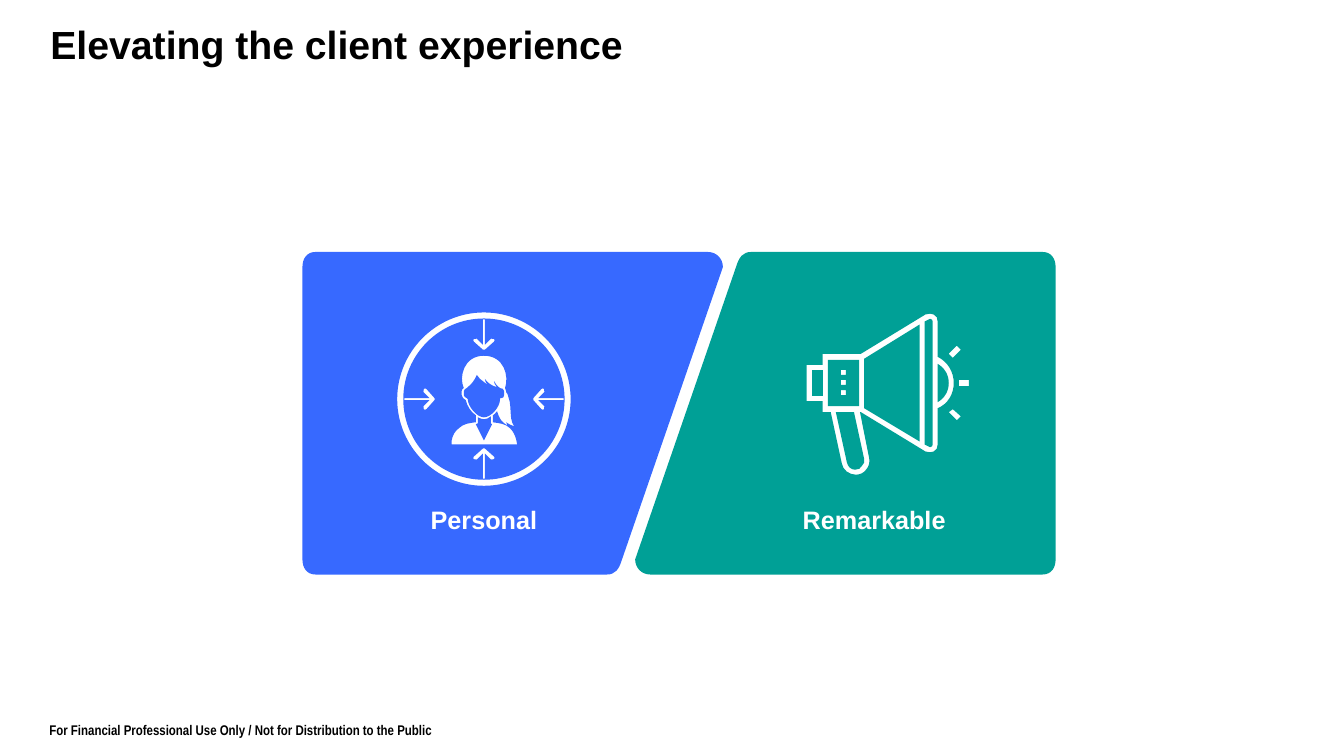
from lxml import etree
from pptx import Presentation
from pptx import util as u
from pptx.dml.color import RGBColor
from pptx.enum import text
from pptx.oxml.ns import qn

BLUE, TEAL, WHITE, BLACK = "3769FF", "00A096", "FFFFFF", "000000"
PANEL_WIDTH, PANEL_HEIGHT = 4.17, 3.2

# Outlines in inches: (x, y) is a corner, six numbers are a Bezier curve.
PANEL = [(4.02, 0), (0.13, 0), (0.04, 0, 0, 0.07, 0, 0.15), (0, 3.05),
         (0, 3.13, 0.04, 3.2, 0.13, 3.2), (3.02, 3.2),
         (3.1, 3.2, 3.14, 3.15, 3.17, 3.05), (4.17, 0.15),
         (4.17, 0.07, 4.11, 0, 4.02, 0)]

# Measured from the centre of the ring.
BUST = [(-0.32, 0.45), (-0.32, 0.41), (-0.31, 0.36, -0.29, 0.32, -0.25, 0.29),
        (-0.2, 0.24, -0.14, 0.24, -0.09, 0.23), (-0.08, 0.23), (-0.08, 0.16),
        (-0.13, 0.13, -0.17, 0.06, -0.18, 0.01),
        (-0.2, 0, -0.22, -0.02, -0.22, -0.04), (-0.22, -0.08),
        (-0.22, -0.09, -0.21, -0.11, -0.2, -0.11),
        (-0.25, -0.22, -0.2, -0.43, 0, -0.43),
        (0.2, -0.43, 0.25, -0.23, 0.21, -0.11),
        (0.21, -0.1, 0.22, -0.09, 0.22, -0.08), (0.22, -0.07),
        (0.23, -0.06, 0.24, -0.04, 0.24, -0.03),
        (0.27, 0.04, 0.26, 0.12, 0.27, 0.19),
        (0.28, 0.22, 0.28, 0.25, 0.3, 0.27),
        (0.27, 0.27, 0.25, 0.24, 0.22, 0.23),
        (0.23, 0.24, 0.23, 0.26, 0.23, 0.26),
        (0.21, 0.25, 0.19, 0.23, 0.17, 0.21),
        (0.15, 0.18, 0.14, 0.15, 0.13, 0.12),
        (0.12, 0.14, 0.1, 0.15, 0.09, 0.16), (0.09, 0.23),
        (0.15, 0.24, 0.21, 0.24, 0.26, 0.29),
        (0.29, 0.32, 0.31, 0.36, 0.32, 0.4), (0.33, 0.45)]
NECK = [(0.07, 0.17), (0.05, 0.19, 0.02, 0.2, 0, 0.2),
        (-0.02, 0.2, -0.04, 0.19, -0.06, 0.18), (-0.06, 0.24),
        (-0.08, 0.25), (0, 0.41), (0.08, 0.25), (0.07, 0.24)]
FACE = [(0.16, 0), (0.16, -0.01), (0.17, -0.01),
        (0.19, -0.01, 0.2, -0.02, 0.2, -0.04), (0.2, -0.08),
        (0.2, -0.1, 0.18, -0.11, 0.16, -0.11),
        (0.13, -0.13, 0.11, -0.16, 0.1, -0.18),
        (0.1, -0.16, 0.11, -0.14, 0.13, -0.12),
        (0.08, -0.13, 0.04, -0.16, 0.01, -0.2),
        (0.01, -0.18, 0.02, -0.16, 0.04, -0.14),
        (0.03, -0.15, 0.01, -0.16, 0, -0.17),
        (-0.03, -0.19, -0.05, -0.21, -0.07, -0.24),
        (-0.09, -0.19, -0.13, -0.14, -0.16, -0.12), (-0.17, -0.11),
        (-0.18, -0.11, -0.2, -0.09, -0.2, -0.08), (-0.2, -0.04),
        (-0.2, -0.03, -0.18, -0.01, -0.17, -0.01), (-0.16, 0),
        (-0.16, 0.07, -0.07, 0.18, 0, 0.18), (0.07, 0.18, 0.16, 0.08, 0.16, 0)]
# Pointing left towards the ring's centre.
INWARD_ARROW = [(0.79, 0.01), (0.54, 0.01), (0.6, 0.07),
                (0.61, 0.09, 0.59, 0.12, 0.57, 0.1), (0.49, 0.01),
                (0.48, 0, 0.48, 0, 0.49, -0.01), (0.57, -0.1),
                (0.59, -0.12, 0.61, -0.09, 0.6, -0.07), (0.54, -0.01), (0.79, -0.01)]

# Measured from the top left corner of the megaphone.
MEGAPHONE = [(1.3, 0.95), (1.3, 1.31), (1.3, 1.34, 1.29, 1.37, 1.26, 1.38),
             (1.24, 1.39, 1.21, 1.39, 1.18, 1.38), (0.54, 0.99), (0.53, 0.99),
             (0.62, 1.44), (0.63, 1.48, 0.62, 1.53, 0.59, 1.56),
             (0.57, 1.59, 0.53, 1.61, 0.49, 1.61),
             (0.42, 1.61, 0.36, 1.56, 0.35, 1.5), (0.24, 0.99), (0.16, 0.99),
             (0.16, 0.88), (0, 0.88), (0, 0.52), (0.16, 0.52), (0.16, 0.41),
             (0.54, 0.41), (1.18, 0.02), (1.21, 0.01, 1.24, 0.01, 1.26, 0.02),
             (1.29, 0.03, 1.3, 0.06, 1.3, 0.09), (1.3, 0.44),
             (1.4, 0.49, 1.46, 0.59, 1.46, 0.7), (1.46, 0.81, 1.4, 0.91, 1.3, 0.95)]
HANDLE = [(0.29, 0.99), (0.4, 1.49), (0.41, 1.53, 0.44, 1.56, 0.48, 1.56),
          (0.51, 1.56, 0.54, 1.55, 0.55, 1.52),
          (0.57, 1.5, 0.58, 1.48, 0.57, 1.45), (0.47, 0.99)]
HORN = [(0.57, 0.95), (1.12, 1.28), (1.12, 0.12), (0.57, 0.46)]
RIM = [(1.24, 0.07), (1.23, 0.06, 1.22, 0.06, 1.21, 0.07), (1.17, 0.09),
       (1.17, 1.31), (1.21, 1.33), (1.22, 1.34, 1.23, 1.34, 1.24, 1.33),
       (1.24, 1.33, 1.25, 1.33, 1.25, 1.31), (1.25, 0.09),
       (1.25, 0.07, 1.24, 0.07, 1.24, 0.07)]
SOUND_BOW = [(1.3, 0.51), (1.3, 0.89), (1.37, 0.85, 1.41, 0.78, 1.41, 0.7),
             (1.41, 0.62, 1.37, 0.55, 1.3, 0.51)]
SOUND_RAYS = [[(1.49, 0.33), (1.53, 0.37), (1.45, 0.45), (1.41, 0.41)],
              [(1.51, 0.67), (1.61, 0.67), (1.61, 0.73), (1.51, 0.73)],
              [(1.49, 1.07), (1.41, 0.99), (1.45, 0.96), (1.53, 1.03)]]


def rgb(color):
    return RGBColor.from_string(color)


def pairs(part):
    return list(zip(part[::2], part[1::2]))


def transform(outline, move):
    return [tuple(value for pair in pairs(part) for value in move(*pair))
            for part in outline]


def shift(outline, dx, dy):
    return transform(outline, lambda x, y: (x + dx, y + dy))


def rectangle(x, y, width, height):
    return [(x, y), (x + width, y), (x + width, y + height), (x, y + height)]


def circle(radius):
    bend = 0.55 * radius
    return [(radius, 0), (radius, bend, bend, radius, 0, radius),
            (-bend, radius, -radius, bend, -radius, 0),
            (-radius, -bend, -bend, -radius, 0, -radius),
            (bend, -radius, radius, -bend, radius, 0)]


def add_outline(slide, left, top, color, outline, *holes):
    """Draw one filled shape with smooth curves; the holes are cut out of it."""
    contours = [shift(contour, left, top) for contour in (outline, *holes)]
    corners = [tuple(map(u.Inches, part[-2:])) for part in contours[0]]
    builder = slide.shapes.build_freeform(*corners[0])
    builder.add_line_segments(corners[1:])
    shape = builder.convert_to_shape()
    geometry = shape._element.spPr.find(".//" + qn("a:path"))
    for child in list(geometry):
        geometry.remove(child)
    for contour in contours:
        for index, part in enumerate(contour):
            kind = "moveTo" if index == 0 else "lnTo" if len(part) == 2 else "cubicBezTo"
            command = etree.SubElement(geometry, qn("a:" + kind))
            for x, y in pairs(part):
                etree.SubElement(command, qn("a:pt"), x=str(u.Inches(x) - shape.left),
                                 y=str(u.Inches(y) - shape.top))
        etree.SubElement(geometry, qn("a:close"))
    shape.shadow.inherit = False
    shape.fill.solid()
    shape.fill.fore_color.rgb = rgb(color)
    shape.line.fill.background()


def write(shape, box, words, color, anchor=text.MSO_ANCHOR.TOP, align=None, **font):
    shape.left, shape.top, shape.width, shape.height = map(u.Inches, box)
    frame = shape.text_frame
    frame.text = words
    settings = dict(word_wrap=True, auto_size=text.MSO_AUTO_SIZE.NONE,
                    vertical_anchor=anchor, margin_left=0, margin_top=0,
                    margin_right=0, margin_bottom=0)
    for name, value in settings.items():
        setattr(frame, name, value)
    paragraph = frame.paragraphs[0]
    paragraph.alignment = align or text.PP_ALIGN.LEFT
    for name, value in dict(bold=True, **font).items():
        setattr(paragraph.font, name, value)
    paragraph.font.color.rgb = rgb(color)


def add_label(slide, box, words, color, **options):
    label = slide.shapes.add_textbox(*map(u.Inches, box))
    write(label, box, words, color, **options)


def add_panel_label(slide, left, top, words):
    add_label(slide, (left, top, 2.3, 0.3), words, WHITE,
              align=text.PP_ALIGN.CENTER, size=u.Pt(18), name="Arial")


def add_personal_panel(slide, left, top):
    x, y = 1.8, 1.46
    add_outline(slide, left, top, BLUE, PANEL, shift(circle(0.86), x, y))
    arrows = [transform(INWARD_ARROW,
                        lambda r, s: (r * dx - s * dy, r * dy + s * dx))
              for dx, dy in ((0, -1), (1, 0), (0, 1), (-1, 0))]
    add_outline(slide, left + x, top + y, BLUE, circle(0.8), BUST, *arrows)
    for outline in (NECK, FACE):
        add_outline(slide, left + x, top + y, BLUE, outline)
    add_panel_label(slide, left + 0.65, top + 2.5, "Personal")


def add_remarkable_panel(slide, left, top):
    x, y = 1.7, 0.6
    turned = transform(PANEL, lambda px, py: (PANEL_WIDTH - px, PANEL_HEIGHT - py))
    cutouts = [shift(part, x, y) for part in (MEGAPHONE, *SOUND_RAYS)]
    add_outline(slide, left, top, TEAL, turned, *cutouts)
    for outline in (HANDLE, HORN, RIM, SOUND_BOW, rectangle(0.05, 0.57, 0.11, 0.26)):
        add_outline(slide, left + x, top + y, TEAL, outline)
    dots = [rectangle(0.34, 0.57 + 0.1 * row, 0.05, 0.05) for row in range(3)]
    add_outline(slide, left + x, top + y, TEAL, rectangle(0.21, 0.47, 0.31, 0.46), *dots)
    add_panel_label(slide, left + 1.22, top + 2.5, "Remarkable")


def main():
    presentation = Presentation()
    presentation.slide_width, presentation.slide_height = u.Inches(13.33), u.Inches(7.5)
    slide = presentation.slides.add_slide(presentation.slide_layouts[5])
    write(slide.shapes.title, (0.5, 0.2, 9.5, 0.85), "Elevating the client experience",
          BLACK, size=u.Pt(28), name="Arial")
    add_personal_panel(slide, 3, 2.5)
    add_remarkable_panel(slide, 6.3, 2.5)
    add_label(slide, (0.49, 7.14, 12, 0.18),
              "For Financial Professional Use Only / Not for Distribution to the Public",
              BLACK, anchor=text.MSO_ANCHOR.BOTTOM, size=u.Pt(10), name="Arial Narrow")
    presentation.save("out.pptx")


if __name__ == "__main__":
    main()
